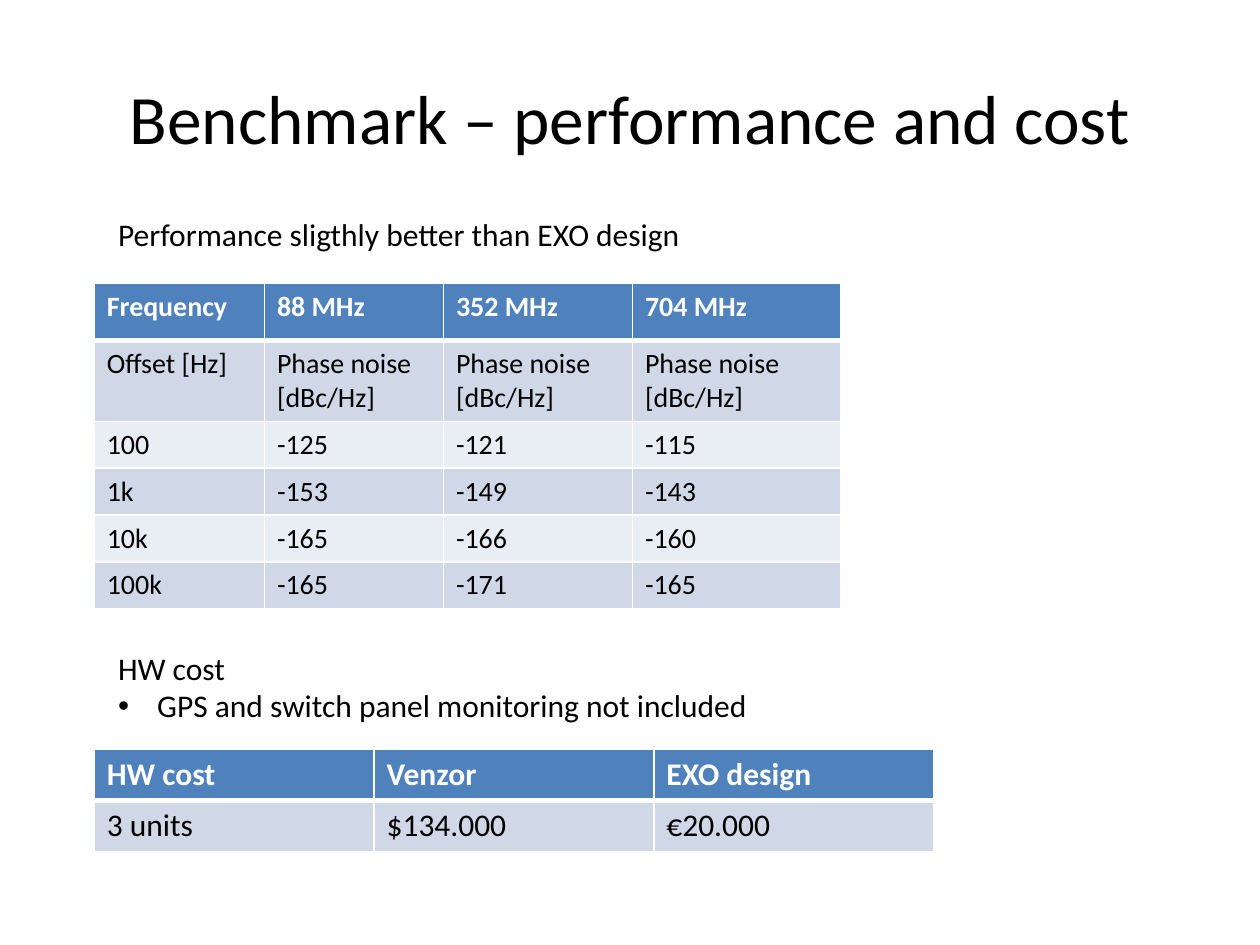
from dataclasses import dataclass

from lxml.etree import SubElement
from pptx import Presentation
from pptx.dml.color import RGBColor
from pptx.enum.text import MSO_ANCHOR, PP_ALIGN
from pptx.oxml.ns import qn
from pptx.util import Cm, Pt

BLACK = RGBColor(0x00, 0x00, 0x00)
WHITE = RGBColor(0xFF, 0xFF, 0xFF)
HEADER_BLUE = RGBColor(0x4F, 0x81, 0xBD)
BANDS = (RGBColor(0xD0, 0xD8, 0xE8), RGBColor(0xE9, 0xED, 0xF4))

FONT = "Calibri"
TABLE_LEFT = 1.9
TEXT_LEFT, TEXT_WIDTH = 2.13, 18.21
BULLET_INDENT = Cm(0.79)


@dataclass
class TextSpec:
    """A text box in cm; paragraphs starting with a bullet sign become list items."""
    left: float
    top: float
    width: float
    height: float
    lines: list[str]
    size: float = 18
    align: PP_ALIGN = PP_ALIGN.LEFT
    anchor: MSO_ANCHOR = MSO_ANCHOR.TOP


@dataclass
class TableSpec:
    top: float
    widths: list[float]
    heights: list[float]
    rows: list[list[str]]
    size: float


TEXTS = [
    TextSpec(1.27, 0.76, 22.86, 3.18, ["Benchmark – performance and cost"],
             39.6, PP_ALIGN.CENTER, MSO_ANCHOR.MIDDLE),
    TextSpec(TEXT_LEFT, 4.22, TEXT_WIDTH, 1.02,
             ["Performance sligthly better than EXO design"]),
    TextSpec(TEXT_LEFT, 12.95, TEXT_WIDTH, 1.8,
             ["HW cost", "•GPS and switch panel monitoring not included"]),
]

TABLES = [
    TableSpec(5.72, [3.43, 3.61, 3.81, 4.19], [1.14, 1.61] + [0.94] * 4, [
        ["Frequency", "88 MHz", "352 MHz", "704 MHz"],
        ["Offset [Hz]"] + ["Phase noise [dBc/Hz]"] * 3,
        ["100", "-125", "-121", "-115"],
        ["1k", "-153", "-149", "-143"],
        ["10k", "-165", "-166", "-160"],
        ["100k", "-165", "-171", "-165"],
    ], 16),
    TableSpec(15.11, [5.64] * 3, [1.03] * 2, [
        ["HW cost", "Venzor", "EXO design"],
        ["3 units", "$134.000", "€20.000"],
    ], 18),
]


def add_run(p, text: str, size: float, color: RGBColor, bold: bool = False) -> None:
    r = p.add_run()
    r.text = text
    for name, value in {"name": FONT, "size": Pt(size), "bold": bold}.items():
        setattr(r.font, name, value)
    r.font.color.rgb = color


def set_bullet(p) -> None:
    pPr = p._p.get_or_add_pPr()
    pPr.set("marL", str(BULLET_INDENT))
    pPr.set("indent", str(-BULLET_INDENT))
    SubElement(pPr, qn("a:buFont")).set("typeface", "Arial")
    SubElement(pPr, qn("a:buChar")).set("char", "•")


def add_text(slide, spec: TextSpec) -> None:
    sp = slide.shapes.add_textbox(*map(Cm, (spec.left, spec.top, spec.width, spec.height)))
    tf = sp.text_frame
    for name, value in {"word_wrap": True, "vertical_anchor": spec.anchor}.items():
        setattr(tf, name, value)
    for i, line in enumerate(spec.lines):
        p = tf.paragraphs[0] if i == 0 else tf.add_paragraph()
        p.alignment = spec.align
        if line.startswith("•"):
            set_bullet(p)
        add_run(p, line.removeprefix("•"), spec.size, BLACK)


def set_borders(cell, top: float, bottom: float) -> None:
    """Draw white cell borders; the line elements must precede the fill."""
    tcPr = cell._tc.get_or_add_tcPr()
    sides = {"a:lnL": 1, "a:lnR": 1, "a:lnT": top, "a:lnB": bottom}
    for i, (tag, width) in enumerate(sides.items()):
        ln = SubElement(tcPr, qn(tag), w=str(Pt(width)))
        fill = SubElement(ln, qn("a:solidFill"))
        SubElement(fill, qn("a:srgbClr"), val=str(WHITE))
        tcPr.insert(i, ln)


def add_table(slide, spec: TableSpec) -> None:
    table = slide.shapes.add_table(
        len(spec.rows), len(spec.widths), Cm(TABLE_LEFT), Cm(spec.top),
        Cm(sum(spec.widths)), Cm(sum(spec.heights))).table
    for column, width in zip(table.columns, spec.widths):
        column.width = Cm(width)
    for i, (row, height, values) in enumerate(zip(table.rows, spec.heights, spec.rows)):
        row.height = Cm(height)
        header = i == 0
        for cell, value in zip(row.cells, values):
            cell.fill.solid()
            cell.fill.fore_color.rgb = HEADER_BLUE if header else BANDS[(i - 1) % 2]
            set_borders(cell, top=3 if i == 1 else 1, bottom=3 if header else 1)
            add_run(cell.text_frame.paragraphs[0], value, spec.size,
                    WHITE if header else BLACK, header)


def main() -> None:
    prs = Presentation()
    prs.slide_width, prs.slide_height = Cm(25.4), Cm(19.05)
    s = prs.slides.add_slide(prs.slide_layouts[6])
    for table in TABLES:
        add_table(s, table)
    for text in TEXTS:
        add_text(s, text)
    prs.save("out.pptx")


if __name__ == "__main__":
    main()
